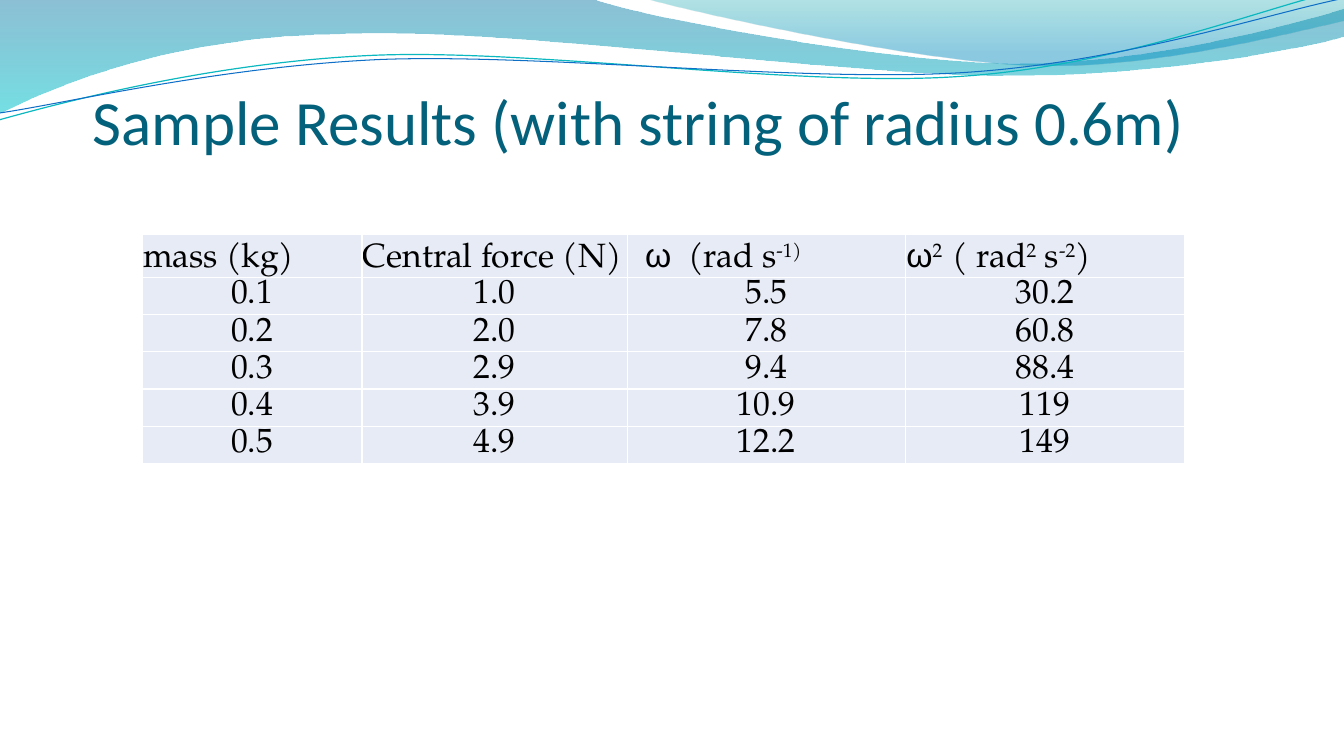
from math import cos, radians, sin

from lxml.etree import SubElement
from pptx import Presentation
from pptx.dml.color import RGBColor
from pptx.enum.text import MSO_ANCHOR, MSO_AUTO_SIZE, PP_ALIGN
from pptx.oxml.ns import qn
from pptx.util import Inches, Pt

COLORS = {"title": "04617B", "text": "000000", "cell": "E7EBF5", "border": "FFFFFF",
          "teal line": "0AB8BF", "blue line": "0F6FC6", "deep blue": "0074A1",
          "cyan": "00C6CF", "sea green": "00A1A9", "sky blue": "008BBF"}
BODY_FONT, TITLE_FONT, GREEK_FONT = "TeX Gyre Pagella", "Calibri", "Arial"
SLIDE_W, SLIDE_H = 13.33, 7.5

# Each step is a point (2 numbers) or a cubic curve (6 numbers), in inches.
BROAD_WAVE = [(0, 0), (5.87, -0.01), (6.34, 0.17, 8.85, 0.63, 10.11, 0.63),
              (11.38, 0.63, 12.78, 0.26, 13.33, 0.09), (13.35, 0.36),
              (13.11, 0.44, 11.6, 0.76, 9.94, 0.75), (8.29, 0.75, 5.09, 0.28, 3.43, 0.34),
              (1.72, 0.36, 0.61, 0.83, -0.01, 1.13), (0, 0)]
RIGHT_WAVE = [(6.39, -0.01), (6.79, 0.11, 9.09, 0.62, 10.25, 0.65),
              (11.41, 0.69, 12.82, 0.32, 13.33, 0.21), (13.33, 0), (6.39, -0.01)]
TEAL_LINE = [(-0.01, 1.19), (0.64, 1.01, 2.11, 0.62, 3.69, 0.55),
             (5.27, 0.48, 7.9, 0.87, 9.5, 0.76), (11.1, 0.66, 12.52, 0.08, 13.31, -0.1)]
BLUE_LINE = [(0, 1.12), (0.63, 1.03, 2.18, 0.66, 3.78, 0.59),
             (5.37, 0.53, 7.96, 0.82, 9.55, 0.72), (11.15, 0.62, 12.55, 0.14, 13.34, -0.02)]
LINE_CENTER, LINE_TILT = (6.66, 0.58), -2.7
# Gradient stops: position, colour, opacity in percent.
BROAD_STOPS = [(0, "deep blue", 45), (1, "cyan", 55)]
RIGHT_STOPS = [(0, "sea green", 30), (0.8, "sky blue", 45)]

RAISED, GREEK = {"baseline": 30}, {"font": GREEK_FONT}
HEADERS = [
    [("mass (kg)", {})],
    [("Central force (N)", {})],
    [("ω", GREEK), (" ", {"spacing": 6}), ("(rad s", {}), ("-1)", RAISED)],
    [("ω", GREEK), ("2", RAISED), (" ", {"baseline": 30, "spacing": 4}), ("( rad", {}),
     ("2", RAISED), (" s", {}), ("-2", RAISED), (")", {})],
]
RESULTS = [("0.1", "1.0", "5.5", "30.2"),
           ("0.2", "2.0", "7.8", "60.8"),
           ("0.3", "2.9", "9.4", "88.4"),
           ("0.4", "3.9", "10.9", "119"),
           ("0.5", "4.9", "12.2", "149")]
COLUMN_WIDTHS = [2.18, 2.63, 2.76, 2.77]
HEADER_HEIGHT, RESULT_HEIGHT = 0.42, 0.37
OMEGA_COLUMN, OMEGA_INDENT = 2, 0.18


def rgb(name):
    return RGBColor.from_string(COLORS[name])


def write(paragraph, text, size=24, font=BODY_FONT, color="text", baseline=0, spacing=0):
    run = paragraph.add_run()
    run.text = text
    run.font.size, run.font.name = Pt(size), font
    run.font.color.rgb = rgb(color)
    properties = run.font._element
    if baseline:
        properties.set("baseline", str(baseline * 1000))
    if spacing:
        properties.set("spc", str(spacing * 100))


def level(step, tilt):
    """Turn a step's points back by the tilt and give them in EMU."""
    (cx, cy), angle = LINE_CENTER, radians(-tilt)
    points = []
    for x, y in zip(step[::2], step[1::2]):
        dx, dy = x - cx, y - cy
        points.append((Inches(cx + dx * cos(angle) - dy * sin(angle)),
                       Inches(cy + dx * sin(angle) + dy * cos(angle))))
    return points


def add_outline(slide, steps, tilt=0, close=False):
    """Draw the steps as lines and curves, and move the outline to the master."""
    (start,), *rest = [level(step, tilt) for step in steps]
    builder = slide.shapes.build_freeform(*start)
    builder.add_line_segments([points[-1] for points in rest], close=close)
    outline = builder.convert_to_shape()
    outline.shadow.inherit = False
    for segment, points in zip(list(outline.element.iter(qn("a:lnTo"))), rest):
        if len(points) == 3:
            curve = SubElement(segment.getparent(), qn("a:cubicBezTo"))
            for x, y in points:
                SubElement(curve, qn("a:pt"), x=str(x - outline.left), y=str(y - outline.top))
            segment.getparent().replace(segment, curve)
    outline.rotation = tilt
    master = slide.slide_layout.slide_master
    outline.element.nvSpPr.cNvPr.set("id", str(20 + len(master.shapes)))
    master.placeholders[0].element.addprevious(outline.element)
    return outline


def add_wave(slide, steps, stops):
    wave = add_outline(slide, steps, close=True)
    wave.line.fill.background()
    wave.fill.gradient()
    wave.fill.gradient_angle = 270
    for stop, (position, color, _) in zip(wave.fill.gradient_stops, stops):
        stop.position = position
        stop.color.rgb = rgb(color)
    for tint, (_, _, opacity) in zip(wave.element.spPr.iter(qn("a:srgbClr")), stops):
        SubElement(tint, qn("a:alpha"), val=str(opacity * 1000))


def add_wave_line(slide, steps, color, width):
    wave_line = add_outline(slide, steps, tilt=LINE_TILT)
    wave_line.fill.background()
    wave_line.line.color.rgb = rgb(color)
    wave_line.line.width = Pt(width)


def add_header_waves(slide):
    add_wave(slide, BROAD_WAVE, BROAD_STOPS)
    add_wave(slide, RIGHT_WAVE, RIGHT_STOPS)
    add_wave_line(slide, TEAL_LINE, "teal line", 0.85)
    add_wave_line(slide, BLUE_LINE, "blue line", 0.75)


def place_title(slide, left, top, width, height):
    title = slide.shapes.title
    title.left, title.top = Inches(left), Inches(top)
    title.width, title.height = Inches(width), Inches(height)
    frame = title.text_frame
    frame.margin_left = frame.margin_right = frame.margin_bottom = 0
    frame.margin_top = Inches(0.05)
    frame.vertical_anchor = MSO_ANCHOR.BOTTOM
    frame.auto_size = MSO_AUTO_SIZE.NONE
    frame.word_wrap = True
    frame.paragraphs[0].alignment = PP_ALIGN.LEFT
    write(frame.paragraphs[0], "Sample Results (with string of radius 0.6m)",
          size=45, font=TITLE_FONT, color="title")


def format_cell(cell, anchor, indent=0.01):
    cell.margin_left = Inches(indent)
    cell.margin_right = cell.margin_top = Inches(0.01)
    cell.margin_bottom = 0
    cell.vertical_anchor = anchor
    properties = cell._tc.get_or_add_tcPr()
    for side in ("a:lnL", "a:lnR", "a:lnT", "a:lnB"):
        border = SubElement(properties, qn(side), w=str(Pt(1)))
        SubElement(SubElement(border, qn("a:solidFill")), qn("a:srgbClr"),
                   val=COLORS["border"])
    cell.fill.solid()
    cell.fill.fore_color.rgb = rgb("cell")


def add_results_table(slide, left, top):
    heights = [HEADER_HEIGHT] + [RESULT_HEIGHT] * len(RESULTS)
    table = slide.shapes.add_table(
        len(heights), len(COLUMN_WIDTHS), Inches(left), Inches(top),
        Inches(sum(COLUMN_WIDTHS)), Inches(sum(heights))).table
    table.first_row = table.horz_banding = False
    for column, width in zip(table.columns, COLUMN_WIDTHS):
        column.width = Inches(width)
    for row, height in zip(table.rows, heights):
        row.height = Inches(height)
    for c, pieces in enumerate(HEADERS):
        cell = table.cell(0, c)
        format_cell(cell, MSO_ANCHOR.BOTTOM, OMEGA_INDENT if c == OMEGA_COLUMN else 0.01)
        for text, style in pieces:
            write(cell.text_frame.paragraphs[0], text, **style)
    for r, values in enumerate(RESULTS, start=1):
        for c, value in enumerate(values):
            cell = table.cell(r, c)
            format_cell(cell, MSO_ANCHOR.MIDDLE)
            paragraph = cell.text_frame.paragraphs[0]
            paragraph.alignment = PP_ALIGN.CENTER
            write(paragraph, value)


def main():
    deck = Presentation()
    deck.slide_width, deck.slide_height = Inches(SLIDE_W), Inches(SLIDE_H)
    slide = deck.slides.add_slide(deck.slide_layouts[5])
    add_header_waves(slide)
    place_title(slide, left=0.92, top=0.4, width=11.5, height=1.17)
    add_results_table(slide, left=1.41, top=2.33)
    deck.save("out.pptx")


if __name__ == "__main__":
    main()
